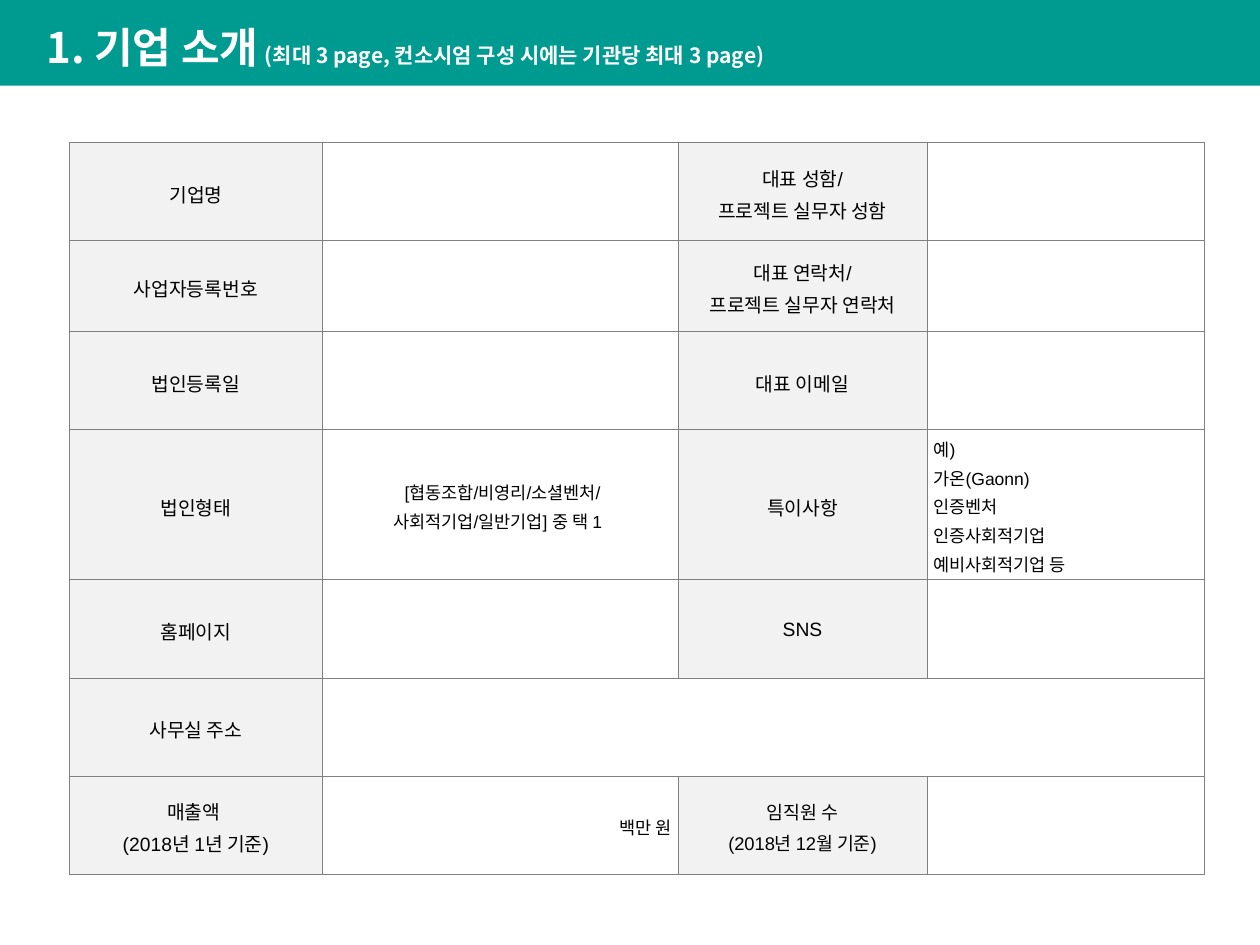
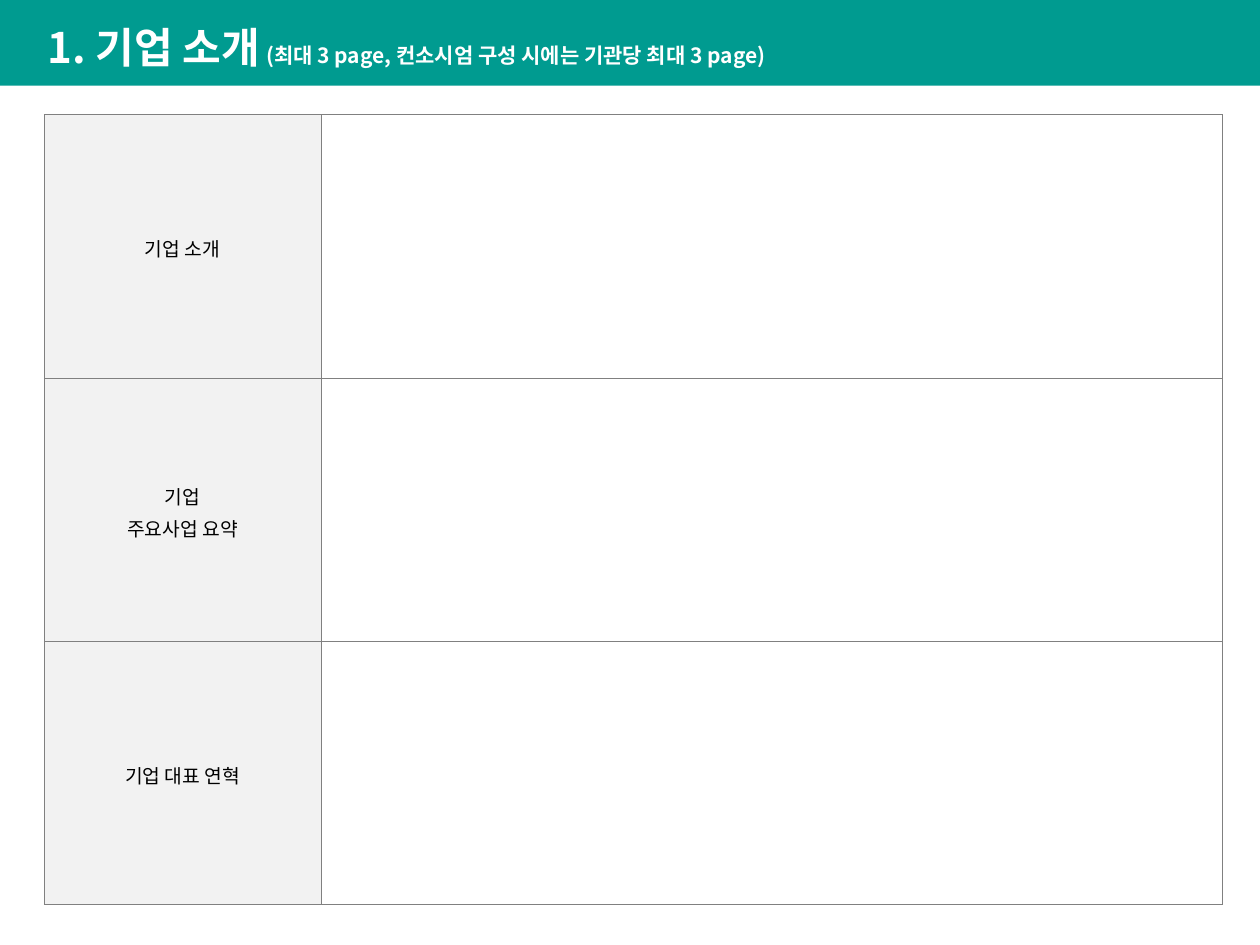
"""Build the two company profile form slides."""
import pptx
import pptx.dml.color
import pptx.enum.shapes
import pptx.enum.text
import pptx.oxml
import pptx.oxml.ns
import pptx.util
from pptx.util import Inches, Pt

TEAL, LABEL, WHITE, BLACK, GRID = "009B90", "F2F2F2", "FFFFFF", "000000", "808080"
KOREAN_FONT = "Noto Sans CJK KR"
LINE_SPACING = 1.15
LEFT, CENTER, RIGHT = (getattr(pptx.enum.text.PP_ALIGN, a) for a in ("LEFT", "CENTER", "RIGHT"))

TITLE = [
    ("1. 기업 소개", 24),
    (" ", 16),
    ("(최대 3 page, 컨소시엄 구성 시에는 기관당 최대 3 page)", 12),
]

SLIDES = [
    {
        "title_left": 0.27,
        "at": (0.55, 1.13),
        "font": "Arial",
        "cols": [2.01, 2.82, 1.98, 2.2],
        "heights": [0.78, 0.72, 0.78, 1.19, 0.78, 0.78, 0.78],
        "rows": [
            ["기업명", "", "대표 성함/\v프로젝트 실무자 성함", ""],
            ["사업자등록번호", "", "대표 연락처/\n프로젝트 실무자 연락처", ""],
            ["법인등록일", "", "대표 이메일", ""],
            [
                "법인형태",
                (" [협동조합/비영리/소셜벤처/\n사회적기업/일반기업] 중 택 1 ", 10, CENTER),
                "특이사항",
                ("예)\n가온(Gaonn)\n인증벤처\n인증사회적기업\n예비사회적기업 등", 10, LEFT),
            ],
            ["홈페이지", "", "SNS", ""],
            ["사무실 주소", "", None, None],
            [
                "매출액 \n(2018년 1년 기준)",
                ("백만 원", 10, RIGHT),
                ("임직원 수\n(2018년 12월 기준)", 10.5, CENTER),
                "",
            ],
        ],
    },
    {
        "title_left": 0.28,
        "at": (0.35, 0.91),
        "font": "Calibri",
        "cols": [2.2, 2.88, 2.02, 2.25],
        "heights": [2.09] * 3,
        "rows": [
            ["기업 소개", "", None, None],
            ["기업\n주요사업 요약", "", None, None],
            ["기업 대표 연혁", "", None, None],
        ],
    },
]


def rgb(color):
    return pptx.dml.color.RGBColor.from_string(color)


def fill_with(item, color):
    item.fill.solid()
    item.fill.fore_color.rgb = rgb(color)


def style_run(r, size, font, color, bold=False):
    r.font.size = Pt(size)
    r.font.name = font
    r.font.bold = bold
    r.font.color.rgb = rgb(color)
    ea = pptx.oxml.parse_xml(f'<a:ea {pptx.oxml.ns.nsdecls("a")} typeface="{KOREAN_FONT}"/>')
    r.font._element.find(pptx.oxml.ns.qn("a:latin")).addnext(ea)


def add_borders(cell):
    tc_pr = cell._tc.get_or_add_tcPr()
    for i, side in enumerate("LRTB"):
        line = pptx.oxml.parse_xml(
            f'<a:ln{side} {pptx.oxml.ns.nsdecls("a")} w="{Pt(0.25)}"><a:solidFill>'
            f'<a:srgbClr val="{GRID}"/></a:solidFill></a:ln{side}>')
        tc_pr.insert(i, line)


def add_band(slide, width):
    sp = slide.shapes.add_shape(
        pptx.enum.shapes.MSO_SHAPE.RECTANGLE, 0, 0, width, Inches(0.68))
    sp.shadow.inherit = False
    fill_with(sp, TEAL)
    sp.line.fill.background()


def add_title(slide, left):
    box = slide.shapes.add_textbox(Inches(left), Inches(0.06), Inches(10 - left), Inches(0.57))
    tf = box.text_frame
    tf.word_wrap = True
    p = tf.paragraphs[0]
    p.line_spacing = LINE_SPACING
    for text, size in TITLE:
        r = p.add_run()
        r.text = text
        style_run(r, size, KOREAN_FONT, WHITE, bold=True)


def write_cell(cell, content, font):
    text, size, align = content if isinstance(content, tuple) else (content, 11, CENTER)
    cell.vertical_anchor = pptx.enum.text.MSO_ANCHOR.MIDDLE
    cell.margin_left = cell.margin_right = Inches(0.05)
    cell.margin_top = cell.margin_bottom = Inches(0.01)
    cell.text_frame.text = text
    for p in cell.text_frame.paragraphs:
        p.alignment = align
        p.line_spacing = LINE_SPACING
        for r in p.runs:
            style_run(r, size, font, BLACK)


def add_form(slide, form):
    rows, cols, heights = form["rows"], form["cols"], form["heights"]
    left, top = form["at"]
    table = slide.shapes.add_table(
        len(rows), len(cols), Inches(left), Inches(top),
        Inches(sum(cols)), Inches(sum(heights))).table
    table.first_row = table.horz_banding = False
    for column, width in zip(table.columns, cols):
        column.width = Inches(width)
    for row, height in zip(table.rows, heights):
        row.height = Inches(height)
    for i, row in enumerate(rows):
        for j, content in enumerate(row):
            cell = table.cell(i, j)
            is_label = j % 2 == 0 and content is not None
            fill_with(cell, LABEL if is_label else WHITE)
            add_borders(cell)
            if content:
                write_cell(cell, content, form["font"])
        if None in row:
            table.cell(i, row.index(None) - 1).merge(table.cell(i, len(cols) - 1))


def main():
    prs = pptx.Presentation()
    prs.slide_width, prs.slide_height = Inches(10), Inches(7.5)
    for form in SLIDES:
        slide = prs.slides.add_slide(prs.slide_layouts[6])
        add_band(slide, prs.slide_width)
        add_form(slide, form)
        add_title(slide, form["title_left"])
    prs.save("out.pptx")


if __name__ == "__main__":
    main()
